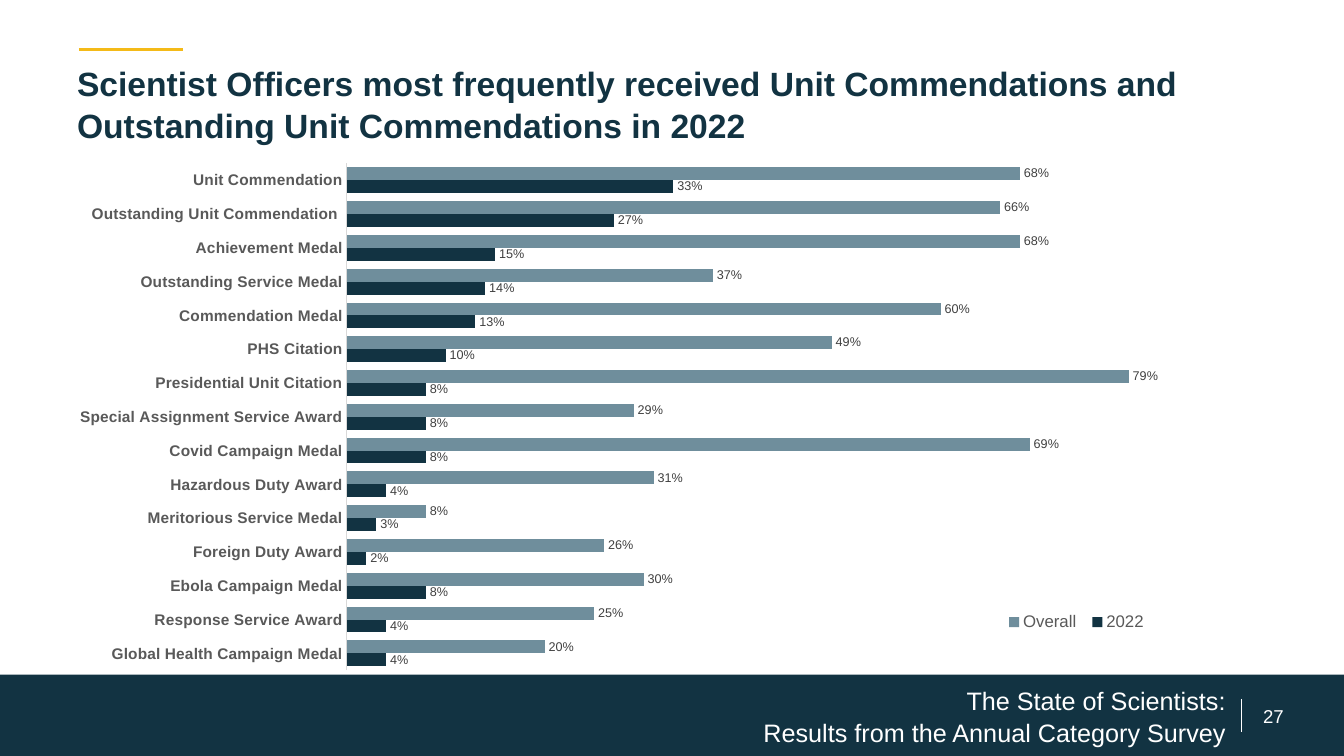
import pptx
import pptx.chart.data
import pptx.dml.color
import pptx.enum.chart
import pptx.enum.shapes
import pptx.enum.text
import pptx.oxml
import pptx.oxml.ns
import pptx.util
from dataclasses import dataclass

COLS, ROWS = 160, 90
CHART_NS = "http://schemas.openxmlformats.org/drawingml/2006/chart"
DRAW_NS = "http://schemas.openxmlformats.org/drawingml/2006/main"


@dataclass
class Theme:
    font: str = "Arial"
    navy: str = "123342"
    steel: str = "6F8E9C"
    gold: str = "F4BA18"
    white: str = "FFFFFF"
    label: str = "404040"
    grey: str = "595959"
    rule: str = "D9D9D9"
    title: float = 24
    foot: float = 18
    page: float = 13.3
    legend: float = 12
    axis: float = 11
    value: float = 9


# Award, share in 2022, share overall; bottom bar first
AWARDS = [
    ("Global Health Campaign Medal", 0.04, 0.20),
    ("Response Service Award", 0.04, 0.25),
    ("Ebola Campaign Medal", 0.08, 0.30),
    ("Foreign Duty Award", 0.02, 0.26),
    ("Meritorious Service Medal", 0.03, 0.08),
    ("Hazardous Duty Award", 0.04, 0.31),
    ("Covid Campaign Medal", 0.08, 0.69),
    ("Special Assignment Service Award", 0.08, 0.29),
    ("Presidential Unit Citation", 0.08, 0.79),
    ("PHS Citation", 0.10, 0.49),
    ("Commendation Medal", 0.13, 0.60),
    ("Outstanding Service Medal", 0.14, 0.37),
    ("Achievement Medal", 0.15, 0.68),
    ("Outstanding Unit Commendation ", 0.27, 0.66),
    ("Unit Commendation", 0.33, 0.68),
]


def rgb(code):
    return pptx.dml.color.RGBColor.from_string(code)


def layout(x, y, w, h, inner=False):
    """Manual chart layout, in shares of the chart's size."""
    target = '<c:layoutTarget val="inner"/>' if inner else ""
    modes = '<c:xMode val="edge"/><c:yMode val="edge"/>'
    sizes = "".join(f'<c:{k} val="{v}"/>' for k, v in zip("xywh", (x, y, w, h)))
    return pptx.oxml.parse_xml(
        f'<c:layout xmlns:c="{CHART_NS}"><c:manualLayout>'
        f"{target}{modes}{sizes}</c:manualLayout></c:layout>")


class Page:
    """One slide; places are in columns and rows of the grid."""

    def __init__(self, deck, theme):
        self.theme = theme
        self.col = deck.slide_width / COLS
        self.row = deck.slide_height / ROWS
        self.shapes = deck.slides.add_slide(deck.slide_layouts[6]).shapes

    def grid(self, x, y, w, h):
        return [round(n) for n in
                (x * self.col, y * self.row, w * self.col, h * self.row)]

    def style(self, font, size, color, bold=False):
        font.name = self.theme.font
        font.size = pptx.util.Pt(size)
        font.bold = bold
        font.color.rgb = rgb(color)

    def line(self, start, end, color, width):
        straight = pptx.enum.shapes.MSO_CONNECTOR.STRAIGHT
        rule = self.shapes.add_connector(straight, *self.grid(*start, *end))
        rule.line.color.rgb = rgb(color)
        rule.line.width = pptx.util.Pt(width)
        props = rule._element.spPr
        props.append(pptx.oxml.parse_xml(f'<a:effectLst xmlns:a="{DRAW_NS}"/>'))

    def band(self, place, color):
        kind = pptx.enum.shapes.MSO_SHAPE.RECTANGLE
        band = self.shapes.add_shape(kind, *self.grid(*place))
        band.shadow.inherit = False
        band.fill.solid()
        band.fill.fore_color.rgb = rgb(color)
        band.line.fill.background()

    def text(self, place, words, size, color, align="LEFT", anchor="MIDDLE",
             bold=False, top=0.05, space=1.0):
        frame = self.shapes.add_textbox(*self.grid(*place)).text_frame
        frame.word_wrap = True
        frame.margin_top = pptx.util.Inches(top)
        frame.vertical_anchor = pptx.enum.text.MSO_ANCHOR[anchor]
        frame.text = words
        for para in frame.paragraphs:
            para.alignment = pptx.enum.text.PP_ALIGN[align]
            para.line_spacing = space
            for run in para.runs:
                self.style(run.font, size, color, bold)

    def bars(self, place, awards):
        look = self.theme
        names, recent, overall = zip(*awards)
        data = pptx.chart.data.CategoryChartData(number_format="0%")
        data.categories = names
        data.add_series("2022", recent)
        data.add_series("Overall", overall)
        kind = pptx.enum.chart.XL_CHART_TYPE.BAR_CLUSTERED
        chart = self.shapes.add_chart(kind, *self.grid(*place), data).chart
        chart.has_title = False
        chart.font.name = look.font
        chart.font.size = pptx.util.Pt(10)
        self.axes(chart)

        plot = chart.plots[0]
        plot.gap_width, plot.overlap = 62, 0
        plot.vary_by_categories = False
        for series, color in zip(plot.series, (look.navy, look.steel)):
            series.format.fill.solid()
            series.format.fill.fore_color.rgb = rgb(color)
            tags = series.data_labels
            tags.show_value = True
            tags.number_format, tags.number_format_is_linked = "0%", False
            tags.position = pptx.enum.chart.XL_LABEL_POSITION.OUTSIDE_END
            self.style(tags.font, look.value, look.label)

        chart.has_legend = True
        legend = chart.legend
        legend.position = pptx.enum.chart.XL_LEGEND_POSITION.BOTTOM
        legend.include_in_layout = False
        self.style(legend.font, look.legend, look.grey)
        self.place(chart)

    def axes(self, chart):
        look = self.theme
        axis = chart.category_axis
        axis.major_tick_mark = pptx.enum.chart.XL_TICK_MARK.NONE
        axis.format.line.color.rgb = rgb(look.rule)
        axis.format.line.width = pptx.util.Pt(0.75)
        self.style(axis.tick_labels.font, look.axis, look.grey, True)
        scale = chart.value_axis
        scale.minimum_scale, scale.maximum_scale = 0, 0.9
        scale.has_major_gridlines = False
        scale.visible = False

    def place(self, chart):
        """Fix plot and legend positions and clear the chart's background."""
        qn = pptx.oxml.ns.qn
        root = chart._chartSpace
        area = root.find(".//" + qn("c:plotArea"))
        for old in area.findall(qn("c:layout")):
            area.remove(old)
        area.insert(0, layout(0.234, 0.023, 0.746, 0.958, inner=True))
        key = root.find(".//" + qn("c:legend"))
        for old in key.findall(qn("c:layout")):
            key.remove(old)
        key.find(qn("c:legendPos")).addnext(layout(0.78, 0.86, 0.13, 0.06))
        root.find(qn("c:chart")).addnext(pptx.oxml.parse_xml(
            f'<c:spPr xmlns:c="{CHART_NS}" xmlns:a="{DRAW_NS}"><a:noFill/>'
            "<a:ln><a:noFill/></a:ln></c:spPr>"))


def main():
    deck = pptx.Presentation()
    deck.slide_width = pptx.util.Inches(13.33)
    deck.slide_height = pptx.util.Inches(7.5)
    look = Theme()
    page = Page(deck, look)
    page.line((9.4, 5.9), (21.8, 5.9), look.gold, 2.5)
    page.band((0, 80.3, 160, 9.7), look.navy)
    page.text((146.9, 83.6, 9.4, 3.4), "27", look.page, look.white, "CENTER")
    page.line((147.8, 83.2), (147.8, 87.2), look.white, 0.75)
    page.text((8, 6.4, 144, 8.2),
              "Scientist Officers most frequently received Unit Commendations "
              "and Outstanding Unit Commendations in 2022",
              look.title, look.navy, anchor="TOP", bold=True,
              top=0.08, space=1.03)
    page.text((45, 83.2, 102.1, 4),
              "The State of Scientists:\vResults from the Annual Category Survey",
              look.foot, look.white, "RIGHT", space=1.05)
    page.bars((8, 18, 142.2, 63), AWARDS)
    deck.save("out.pptx")


if __name__ == "__main__":
    main()
